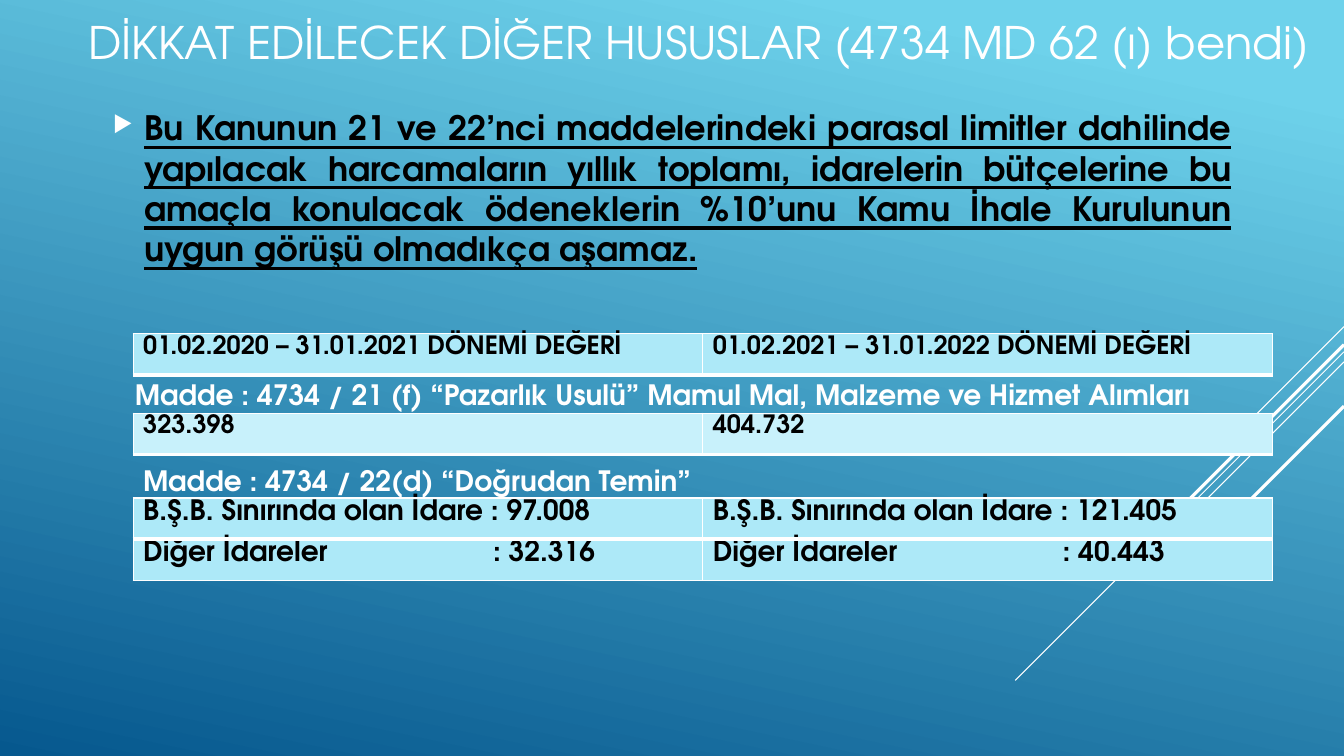
from lxml import etree
from pptx import Presentation
from pptx import util as u
from pptx.dml.color import RGBColor
from pptx.enum import shapes, text
from pptx.oxml import ns

THEME = {
    "font": "TeX Gyre Adventor",
    "white": "FFFFFF", "black": "000000",
    "sky": "6ED2EB", "deep": "06588E",
    "cell": "ADE9F8", "cell_light": "C8F1FB",
    "title": 32, "body": 24, "heading": 20, "value": 18,
    "thin": 1, "thick": 3,
}

TITLE = "DİKKAT EDİLECEK DİĞER HUSUSLAR (4734 MD 62 (ı) bendi)"
RULE = ("Bu Kanunun 21 ve 22’nci maddelerindeki parasal limitler dahilinde yapılacak "
        "harcamaların yıllık toplamı, idarelerin bütçelerine bu amaçla konulacak "
        "ödeneklerin %10’unu Kamu İhale Kurulunun uygun görüşü olmadıkça aşamaz.")
HEADINGS = [
    ("Madde : 4734 / 21 (f) “Pazarlık Usulü” Mamul Mal, Malzeme ve Hizmet Alımları",
     (1.24, 3.7, 11.46, 0.44)),
    ("Madde : 4734 / 22(d) “Doğrudan Temin”", (1.32, 4.55, 11.31, 0.44)),
]
LIMITS = [
    (3.31, "value", "cell", 3,
     [("01.02.2020 – 31.01.2021 DÖNEMİ DEĞERİ", "01.02.2021 – 31.01.2022 DÖNEMİ DEĞERİ")]),
    (4.1, "value", "cell_light", 3, [("323.398", "404.732")]),
    (4.94, "heading", "cell", 1,
     [("B.Ş.B. Sınırında olan İdare : 97.008", "B.Ş.B. Sınırında olan İdare : 121.405"),
      ("Diğer İdareler\t: 32.316", "Diğer İdareler\t: 40.443")]),
]
SLIDE_W, SLIDE_H = 13.33, 7.5
TABLE_LEFT, COLUMN_W, ROW_H, COLON_TAB = 1.32, 5.65, 0.41, 3.47
CELL_TOP = 0.02
RAYS = [(3.24, 1, 0.75), (3.49, 3.26, 0.75), (3.59, 2.07, 0.75),
        (3.42, 1.91, 2.25), (4.03, 1.39, 2.25)]


def color(name):
    return RGBColor.from_string(THEME[name])


def add(parent, tag, **attributes):
    return etree.SubElement(parent, ns.qn(tag), attributes)


def write(frame, words, size, ink, bold=True, underline=False):
    frame.text = words
    paragraph = frame.paragraphs[0]
    font = paragraph.runs[0].font
    font.name, font.size, font.bold = THEME["font"], u.Pt(THEME[size]), bold
    font.color.rgb = color(ink)
    if underline:
        font.underline = True
    return paragraph


def add_words(slide, place, words, size, ink, anchor=text.MSO_ANCHOR.TOP, **style):
    frame = slide.shapes.add_textbox(*map(u.Inches, place)).text_frame
    frame.word_wrap = True
    frame.vertical_anchor = anchor
    return write(frame, words, size, ink, **style)


def add_rays(slide):
    for top, reach, width in RAYS:
        ray = slide.shapes.add_connector(
            shapes.MSO_CONNECTOR.STRAIGHT,
            *map(u.Inches, (SLIDE_W, top, SLIDE_W - reach, top + reach)))
        ray.line.color.rgb = color("white")
        ray.line.width = u.Pt(width)
        add(ray._element.spPr, "a:effectLst")


def add_bullet(paragraph):
    paragraph.alignment = text.PP_ALIGN.JUSTIFY
    properties = paragraph._p.get_or_add_pPr()
    indent = u.Inches(0.31)
    properties.set("marL", str(indent))
    properties.set("indent", str(-indent))
    add(add(properties, "a:buClr"), "a:srgbClr", val=THEME["white"])
    add(properties, "a:buSzPct", val="68000")
    add(properties, "a:buChar", char="▶")


def add_borders(cell, bottom):
    properties = cell._tc.get_or_add_tcPr()
    for side in "LRTB":
        width = bottom if side == "B" else THEME["thin"]
        border = add(properties, f"a:ln{side}", w=str(u.Pt(width)))
        add(add(border, "a:solidFill"), "a:srgbClr", val=THEME["white"])


def add_limits(slide, top, size, fill, last_border, rows):
    place = (TABLE_LEFT, top, 2 * COLUMN_W, ROW_H * len(rows))
    table = slide.shapes.add_table(len(rows), 2, *map(u.Inches, place)).table
    table.first_row = table.horz_banding = False
    for r, row in enumerate(rows):
        for c, words in enumerate(row):
            cell = table.cell(r, c)
            cell.margin_top, cell.margin_bottom = u.Inches(CELL_TOP), 0
            add_borders(cell, last_border if r == len(rows) - 1 else THEME["thick"])
            cell.fill.solid()
            cell.fill.fore_color.rgb = color(fill)
            paragraph = write(cell.text_frame, words, size, "black")
            if "\t" in words:
                tabs = add(paragraph._p.get_or_add_pPr(), "a:tabLst")
                add(tabs, "a:tab", pos=str(u.Inches(COLON_TAB)), algn="l")


def main():
    deck = Presentation()
    deck.slide_width, deck.slide_height = u.Inches(SLIDE_W), u.Inches(SLIDE_H)
    slide = deck.slides.add_slide(deck.slide_layouts[6])
    backdrop = slide.background.fill
    backdrop.gradient()
    backdrop.gradient_angle = 360 - 102
    for stop, position, shade in zip(backdrop.gradient_stops, (0.1, 1), ("sky", "deep")):
        stop.position = position
        stop.color.rgb = color(shade)

    add_rays(slide)
    middle = text.MSO_ANCHOR.MIDDLE
    add_words(slide, (0.78, 0, 12.37, 0.82), TITLE, "title", "white", middle, bold=False)
    add_bullet(add_words(slide, (1.02, 1.05, 11.29, 1.63), RULE, "body", "black",
                         middle, underline=True))
    for limits in LIMITS:
        add_limits(slide, *limits)
    for words, place in HEADINGS:
        add_words(slide, place, words, "heading", "white")
    deck.save("out.pptx")


if __name__ == "__main__":
    main()
